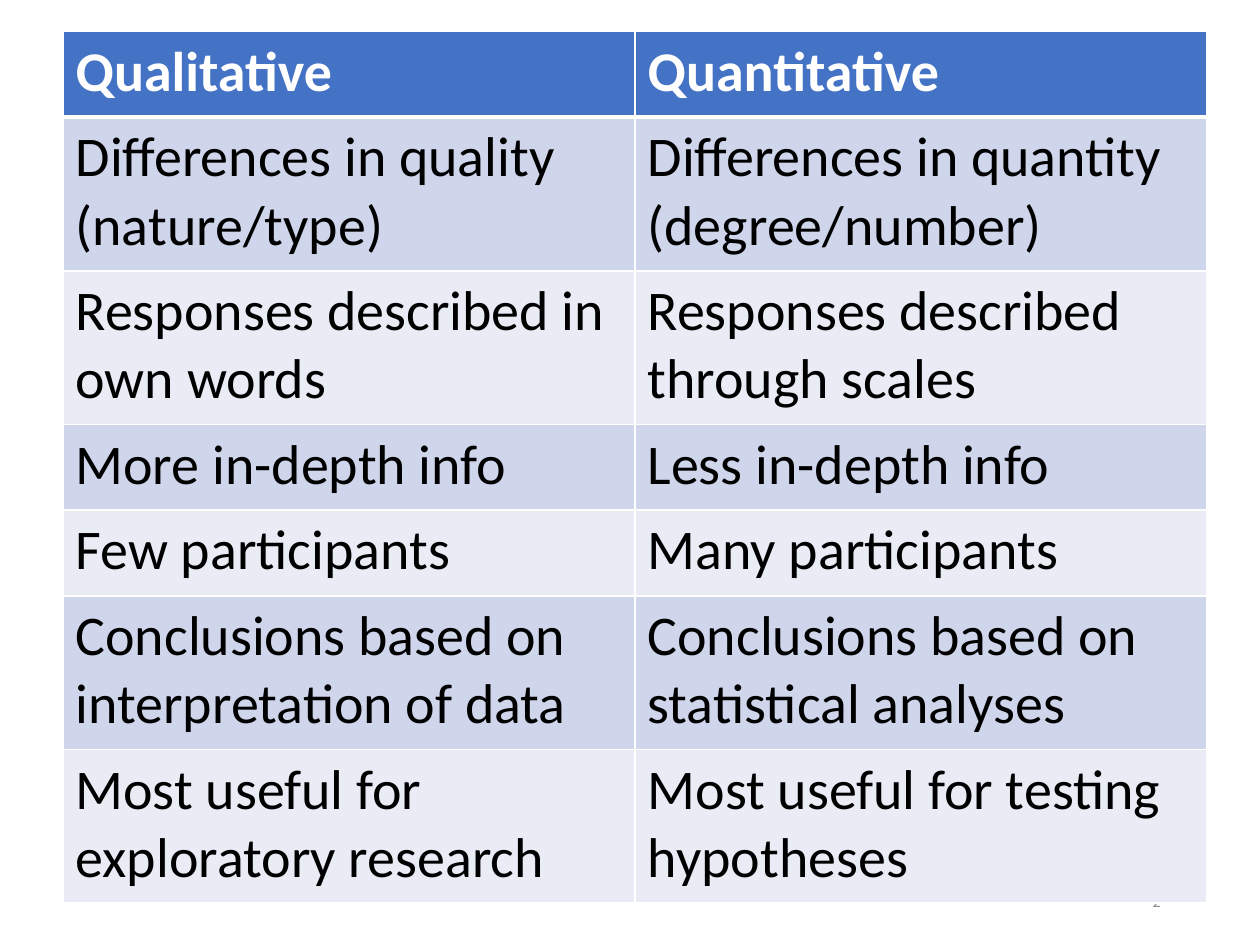
import pptx
import pptx.dml.color
import pptx.enum.text
import pptx.oxml.ns
import pptx.util
import lxml.etree

Inches = pptx.util.Inches
FONT = "Calibri"
WHITE, BLACK, GREY = "FFFFFF", "000000", "8C8C8C"
HEADER_FILL = "4472C4"
BAND_FILLS = ["CFD5EA", "E9EBF5"]

COMPARISON = [
    ("Qualitative", "Quantitative"),
    ("Differences in quality (nature/type)", "Differences in quantity (degree/number)"),
    ("Responses described in own words", "Responses described through scales"),
    ("More in-depth info", "Less in-depth info"),
    ("Few participants", "Many participants"),
    ("Conclusions based on interpretation of data", "Conclusions based on statistical analyses"),
    ("Most useful for exploratory research", "Most useful for testing hypotheses"),
]
ONE_LINE, TWO_LINES = 0.68, 1.22
ROW_HEIGHTS = [ONE_LINE, TWO_LINES, TWO_LINES, ONE_LINE, ONE_LINE, TWO_LINES, TWO_LINES]


def color(hex_value):
    return pptx.dml.color.RGBColor.from_string(hex_value)


def write(paragraph, text, hex_value, **font_format):
    run = paragraph.add_run()
    run.text = text
    run.font.color.rgb = color(hex_value)
    for name, value in {"name": FONT, **font_format}.items():
        setattr(run.font, name, value)


def set_borders(cell, widths):
    """Draw white borders; widths maps L, R, T, B, in that order, to points."""
    properties = cell._tc.get_or_add_tcPr()
    qn = pptx.oxml.ns.qn
    for side, width in widths.items():
        line = lxml.etree.SubElement(properties, qn(f"a:ln{side}"), w=str(pptx.util.Pt(width)))
        fill = lxml.etree.SubElement(line, qn("a:solidFill"))
        lxml.etree.SubElement(fill, qn("a:srgbClr"), val=WHITE)


def add_page_number(slide, left, top, width, height):
    frame = slide.shapes.add_textbox(left, top, width, height).text_frame
    frame.word_wrap = True
    frame.vertical_anchor = pptx.enum.text.MSO_ANCHOR.MIDDLE
    paragraph = frame.paragraphs[0]
    paragraph.alignment = pptx.enum.text.PP_ALIGN.RIGHT
    write(paragraph, "2", GREY, size=pptx.util.Pt(9))


def add_comparison(slide, left, top, width, height):
    columns = len(COMPARISON[0])
    table = slide.shapes.add_table(len(COMPARISON), columns, left, top, width, height).table
    for column in table.columns:
        column.width = width // columns
    for row, (texts, row_height) in enumerate(zip(COMPARISON, ROW_HEIGHTS)):
        table.rows[row].height = Inches(row_height)
        is_header = row == 0
        for column, text in enumerate(texts):
            cell = table.cell(row, column)
            set_borders(cell, {"L": 1, "R": 1, "T": 3 if row == 1 else 1, "B": 3 if is_header else 1})
            cell.fill.solid()
            cell.fill.fore_color.rgb = color(HEADER_FILL if is_header else BAND_FILLS[(row - 1) % 2])
            write(cell.text_frame.paragraphs[0], text, WHITE if is_header else BLACK,
                  size=pptx.util.Pt(32), bold=is_header)


def main():
    deck = pptx.Presentation()
    deck.slide_width, deck.slide_height = Inches(10), Inches(7.5)
    slide = deck.slides.add_slide(deck.slide_layouts[6])
    add_page_number(slide, Inches(7.06), Inches(6.95), Inches(2.25), Inches(0.4))
    add_comparison(slide, Inches(0.5), Inches(0.25), Inches(9.08), Inches(sum(ROW_HEIGHTS)))
    deck.save("out.pptx")


if __name__ == "__main__":
    main()
